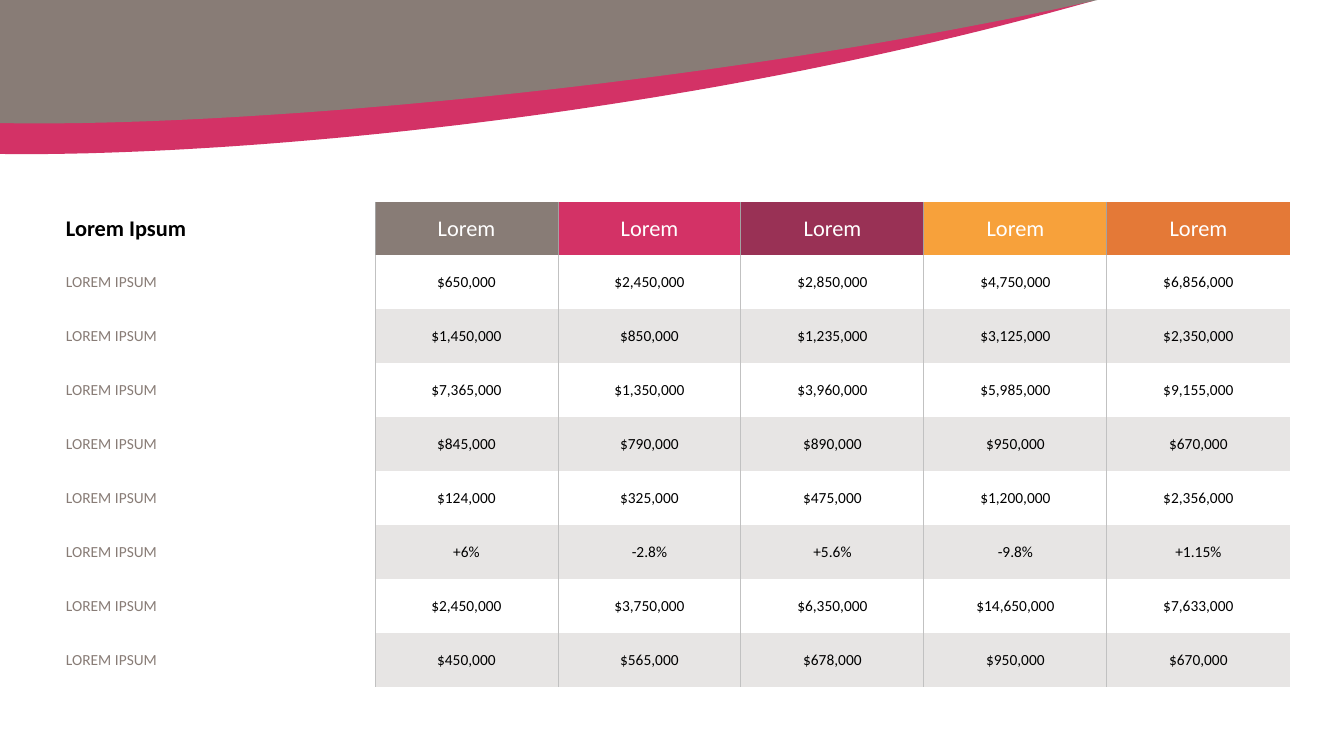
from lxml import etree
from pptx import Presentation
from pptx import util as u
from pptx.dml.color import RGBColor
from pptx.enum import text
from pptx.oxml import ns

PX = 914400 / 100.8
FONT = "Calibri"
COLORS = {
    "taupe": "887C76", "pink": "D33266", "plum": "993155", "amber": "F7A13B",
    "orange": "E47937", "white": "FFFFFF", "band": "E7E5E4", "black": "000000",
    "header_rule": "A3A3A3", "body_rule": "C1C1C1",
}
HEADER = ["Lorem Ipsum"] + ["Lorem"] * 5
HEADER_FILLS = ["white", "taupe", "pink", "plum", "amber", "orange"]
ROW_LABEL = "LOREM IPSUM"
VALUES = [
    ["$650,000", "$2,450,000", "$2,850,000", "$4,750,000", "$6,856,000"],
    ["$1,450,000", "$850,000", "$1,235,000", "$3,125,000", "$2,350,000"],
    ["$7,365,000", "$1,350,000", "$3,960,000", "$5,985,000", "$9,155,000"],
    ["$845,000", "$790,000", "$890,000", "$950,000", "$670,000"],
    ["$124,000", "$325,000", "$475,000", "$1,200,000", "$2,356,000"],
    ["+6%", "-2.8%", "+5.6%", "-9.8%", "+1.15%"],
    ["$2,450,000", "$3,750,000", "$6,350,000", "$14,650,000", "$7,633,000"],
    ["$450,000", "$565,000", "$678,000", "$950,000", "$670,000"],
]
# Fill, top left corner, then the four points of the lower edge's Bezier curve
SWOOSHES = [
    ("pink", (-3, 24), [(-1, 154), (187, 157), (644, 128), (1093, 1)]),
    ("taupe", (-3, -1), [(-1, 123), (238, 128), (714, 86), (1102, -1)]),
]
CURVE_STEPS = 60
TABLE_LEFT, TABLE_TOP = 51, 202
COL_WIDTHS = [324] + [183] * 5
ROW_HEIGHTS = [53] + [54] * len(VALUES)
LABEL_INSET, SIDE_INSET, EDGE_INSET = 15, 5, 3
RULE_PT = 0.75
NO_STYLE = "{2D5ABB26-0587-4C30-8999-92F81FD0307C}"


def px(n):
    return u.Emu(round(n * PX))


def rgb(name):
    return RGBColor.from_string(COLORS[name])


def bezier(points, t):
    weights = ((1 - t) ** 3, 3 * t * (1 - t) ** 2, 3 * t * t * (1 - t), t ** 3)
    return tuple(sum(w * p[axis] for w, p in zip(weights, points)) for axis in (0, 1))


def add_swoosh(slide, color, corner, curve):
    edge = [bezier(curve, i / CURVE_STEPS) for i in range(CURVE_STEPS + 1)]
    builder = slide.shapes.build_freeform(*(px(n) for n in corner), scale=1.0)
    builder.add_line_segments([(px(x), px(y)) for x, y in edge], close=True)
    s = builder.convert_to_shape()
    s.shadow.inherit = False
    s.fill.solid()
    s.fill.fore_color.rgb = rgb(color)
    s.line.fill.background()


def add_rules(cell, sides, color):
    """Draw vertical borders; they must precede the fill in the cell properties."""
    tc_pr = cell._tc.get_or_add_tcPr()
    for i, side in enumerate(sides):
        ln = etree.Element(ns.qn(f"a:ln{side}"), w=str(u.Pt(RULE_PT)))
        fill = etree.SubElement(ln, ns.qn("a:solidFill"))
        etree.SubElement(fill, ns.qn("a:srgbClr"), val=COLORS[color])
        tc_pr.insert(i, ln)


def fill_cell(cell, content, row, col):
    header, label = row == 0, col == 0
    if header:
        fill, ink = HEADER_FILLS[col], "black" if label else "white"
    else:
        fill = "white" if label or row % 2 else "band"
        ink = "taupe" if label else "black"
    cell.fill.solid()
    cell.fill.fore_color.rgb = rgb(fill)
    sides = ("" if label else "L") + ("" if col == len(HEADER) - 1 else "R")
    add_rules(cell, sides, "header_rule" if header else "body_rule")
    layout = {
        "margin_left": px(LABEL_INSET if label else SIDE_INSET),
        "margin_right": px(SIDE_INSET),
        "margin_top": px(EDGE_INSET),
        "margin_bottom": px(EDGE_INSET),
        "vertical_anchor": text.MSO_ANCHOR.MIDDLE,
    }
    for name, value in layout.items():
        setattr(cell, name, value)
    p = cell.text_frame.paragraphs[0]
    p.alignment = text.PP_ALIGN.LEFT if label else text.PP_ALIGN.CENTER
    r = p.add_run()
    r.text = content
    style = {"name": FONT, "size": u.Pt(16 if header else 11), "bold": header and label}
    for name, value in style.items():
        setattr(r.font, name, value)
    r.font.color.rgb = rgb(ink)


def add_figures(slide):
    rows = [HEADER] + [[ROW_LABEL] + values for values in VALUES]
    frame = slide.shapes.add_table(
        len(rows), len(HEADER), px(TABLE_LEFT), px(TABLE_TOP),
        px(sum(COL_WIDTHS)), px(sum(ROW_HEIGHTS)))
    table = frame.table
    table._tbl.tblPr.find(ns.qn("a:tableStyleId")).text = NO_STYLE
    table.horz_banding = False
    for column, width in zip(table.columns, COL_WIDTHS):
        column.width = px(width)
    for row, height in zip(table.rows, ROW_HEIGHTS):
        row.height = px(height)
    for i, row in enumerate(rows):
        for j, content in enumerate(row):
            fill_cell(table.cell(i, j), content, i, j)


def main():
    prs = Presentation()
    prs.slide_width, prs.slide_height = px(1344), px(756)
    slide = prs.slides.add_slide(prs.slide_layouts[6])
    for swoosh in SWOOSHES:
        add_swoosh(slide, *swoosh)
    add_figures(slide)
    prs.save("out.pptx")


if __name__ == "__main__":
    main()
